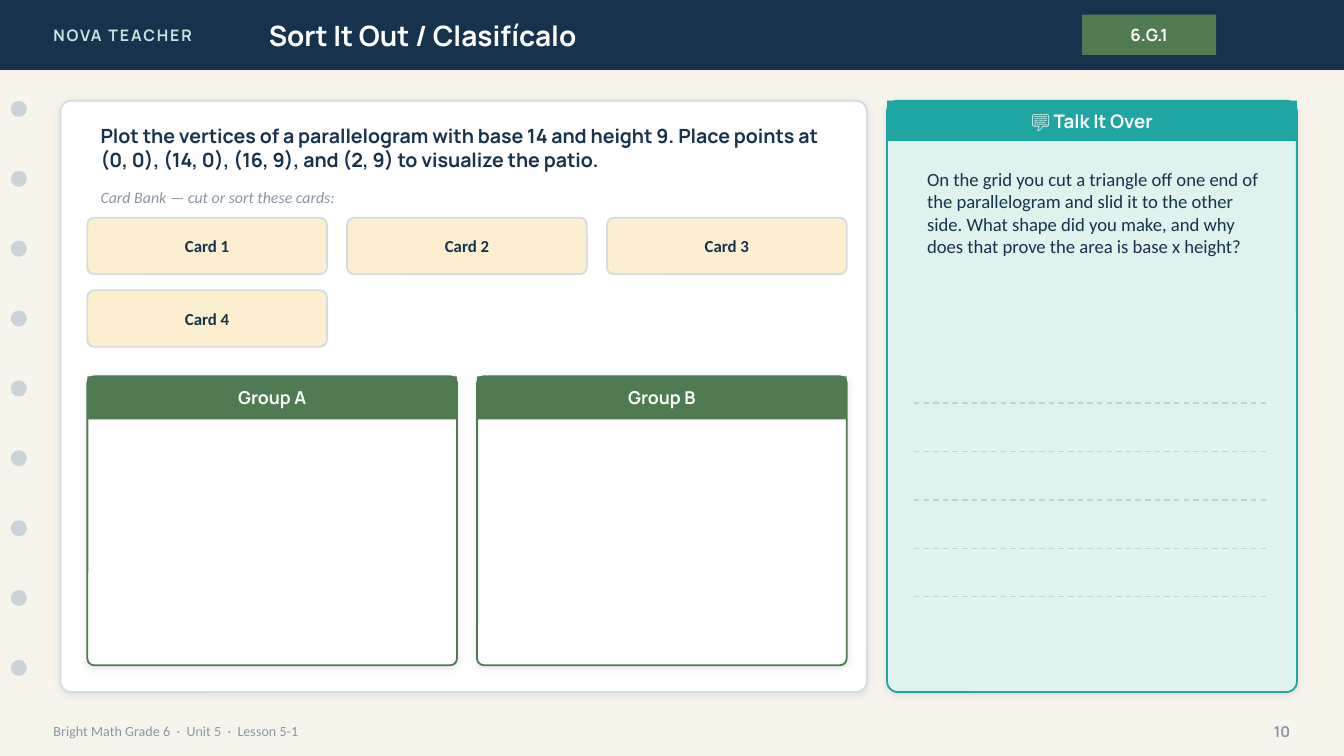
"""Build the "Sort It Out" card-sorting lesson slide."""
import pptx
import pptx.dml.color
import pptx.enum.dml
import pptx.enum.shapes
import pptx.enum.text
import pptx.oxml
import pptx.oxml.ns
import pptx.util

Inches = pptx.util.Inches
Pt = pptx.util.Pt
color = pptx.dml.color.RGBColor.from_string
SHAPE = pptx.enum.shapes.MSO_SHAPE
ALIGN = pptx.enum.text.PP_ALIGN
ANCHOR = pptx.enum.text.MSO_ANCHOR

NAVY, GREEN, TEAL, WHITE = "17324D", "4F7A52", "1FA6A2", "FFFFFF"
GRAY, BORDER = "8A96A3", "D6DBDF"
SHADOW = (
    f'<a:outerShdw {pptx.oxml.ns.nsdecls("a")} blurRad="50800" dist="12700" '
    'dir="5400000" algn="bl" rotWithShape="0">'
    '<a:srgbClr val="1C2E42"><a:alpha val="10000"/></a:srgbClr></a:outerShdw>'
)

deck = pptx.Presentation()
deck.slide_width = Inches(10)
deck.slide_height = Inches(10) * 9 // 16
page = deck.slides.add_slide(deck.slide_layouts[5])
page.background.fill.solid()
page.background.fill.fore_color.rgb = color("F7F4EC")


def add_block(kind, left, top, width, height, fill, border=None, radius=None, shadow=False):
    """Add a filled shape; radius is the corner radius in inches."""
    block = page.shapes.add_shape(kind, Inches(left), Inches(top), Inches(width), Inches(height))
    block.fill.solid()
    block.fill.fore_color.rgb = color(fill)
    if border:
        block.line.color.rgb = color(border)
        block.line.width = Pt(1)
    else:
        block.line.fill.background()
    if radius:
        block.adjustments[0] = radius / min(width, height)
    block.shadow.inherit = False
    if shadow:
        effects = block.element.spPr.find(pptx.oxml.ns.qn("a:effectLst"))
        effects.append(pptx.oxml.parse_xml(SHADOW))
    return block


def write(box, text, size, font, ink, bold=True, italic=False, align=ALIGN.CENTER, anchor=ANCHOR.MIDDLE):
    """Put one formatted paragraph in a shape and return its run."""
    frame = box.text_frame
    frame.word_wrap = True
    frame.auto_size = pptx.enum.text.MSO_AUTO_SIZE.NONE
    frame.vertical_anchor = anchor
    para = frame.paragraphs[0]
    para.alignment = align
    span = para.add_run()
    span.text = text
    para.font.size = Pt(size)
    para.font.name = font
    para.font.bold = bold
    para.font.italic = italic
    para.font.color.rgb = color(ink)
    return span


add_block(SHAPE.RECTANGLE, 0, 0, 10, 0.52, NAVY)
brand = page.shapes.add_textbox(0, 0, Inches(2.4), Inches(0.52))
brand.left = Inches(0.3)
brand_span = write(brand, "NOVA TEACHER", 8.5, "Manrope", "BFE6E2", align=ALIGN.LEFT)
brand_span.font._element.set("spc", "100")

title = page.shapes.title
title.left, title.top, title.width, title.height = Inches(1.9), 0, Inches(5.6), Inches(0.52)
write(title, "Sort It Out / Clasifícalo", 15, "Manrope", WHITE, align=ALIGN.LEFT)
title.element.getparent().append(title.element)

standard = add_block(SHAPE.RECTANGLE, 8.05, 0.11, 1, 0.3, GREEN)
write(standard, "6.G.1", 9, "Manrope", WHITE)

for hole in range(9):
    add_block(SHAPE.OVAL, 0.08, 0.75 + 0.52 * hole, 0.12, 0.12, "CBD3D9")

footer = page.shapes.add_textbox(Inches(0.3), Inches(5.3), Inches(7), Inches(0.28))
write(footer, "Bright Math Grade 6  ·  Unit 5  ·  Lesson 5-1", 7.5, "Calibri", GRAY,
      bold=False, align=ALIGN.LEFT)
page_number = page.shapes.add_textbox(Inches(9.2), Inches(5.3), Inches(0.5), Inches(0.28))
write(page_number, "10", 8, "Manrope", GRAY, align=ALIGN.RIGHT)

add_block(SHAPE.ROUNDED_RECTANGLE, 0.45, 0.75, 6, 4.4, WHITE, BORDER, 0.08, shadow=True)
task = page.shapes.add_textbox(Inches(0.65), Inches(0.9), Inches(5.6), Inches(0.4))
write(task, "Plot the vertices of a parallelogram with base 14 and height 9. Place points at "
      "(0, 0), (14, 0), (16, 9), and (2, 9) to visualize the patio.",
      10.5, "Manrope", NAVY, align=ALIGN.LEFT)
hint = page.shapes.add_textbox(Inches(0.65), Inches(1.35), Inches(5.6), Inches(0.24))
write(hint, "Card Bank — cut or sort these cards:", 8.5, "Calibri", GRAY,
      bold=False, italic=True, align=ALIGN.LEFT)

card_gap = 0.15
card_width = (5.65 - 2 * card_gap) / 3
for index in range(4):
    row, column = divmod(index, 3)
    card = add_block(SHAPE.ROUNDED_RECTANGLE, 0.65 + (card_width + card_gap) * column,
                     1.62 + 0.54 * row, card_width, 0.42, "FBEFD0", BORDER, 0.05)
    write(card, f"Card {index + 1}", 9, "Calibri", NAVY)

for left, name in ((0.65, "Group A"), (3.55, "Group B")):
    add_block(SHAPE.ROUNDED_RECTANGLE, left, 2.8, 2.75, 2.15, WHITE, GREEN, 0.05, shadow=True)
    header = add_block(SHAPE.RECTANGLE, left, 2.8, 2.75, 0.32, GREEN)
    write(header, name, 9.5, "Manrope", WHITE)

add_block(SHAPE.ROUNDED_RECTANGLE, 6.6, 0.75, 3.05, 4.4, "DFF2EE", TEAL, 0.08, shadow=True)
talk_header = add_block(SHAPE.RECTANGLE, 6.6, 0.75, 3.05, 0.3, TEAL)
write(talk_header, "💬 Talk It Over", 10, "Manrope", WHITE)
question = page.shapes.add_textbox(Inches(6.8), Inches(1.2), Inches(2.7), Inches(1.5))
write(question, "On the grid you cut a triangle off one end of the parallelogram and slid it to "
      "the other side. What shape did you make, and why does that prove the area is base x height?",
      10, "Calibri", NAVY, bold=False, align=ALIGN.LEFT, anchor=ANCHOR.TOP)

for index in range(5):
    level = Inches(3 + 0.36 * index)
    rule = page.shapes.add_connector(pptx.enum.shapes.MSO_CONNECTOR.STRAIGHT,
                                     Inches(6.8), level, Inches(9.45), level)
    rule.line.color.rgb = color("C7CDD2")
    rule.line.width = Pt(0.75)
    rule.line.dash_style = pptx.enum.dml.MSO_LINE.DASH
    rule.element.spPr.append(pptx.oxml.parse_xml(f'<a:effectLst {pptx.oxml.ns.nsdecls("a")}/>'))

deck.save("out.pptx")
